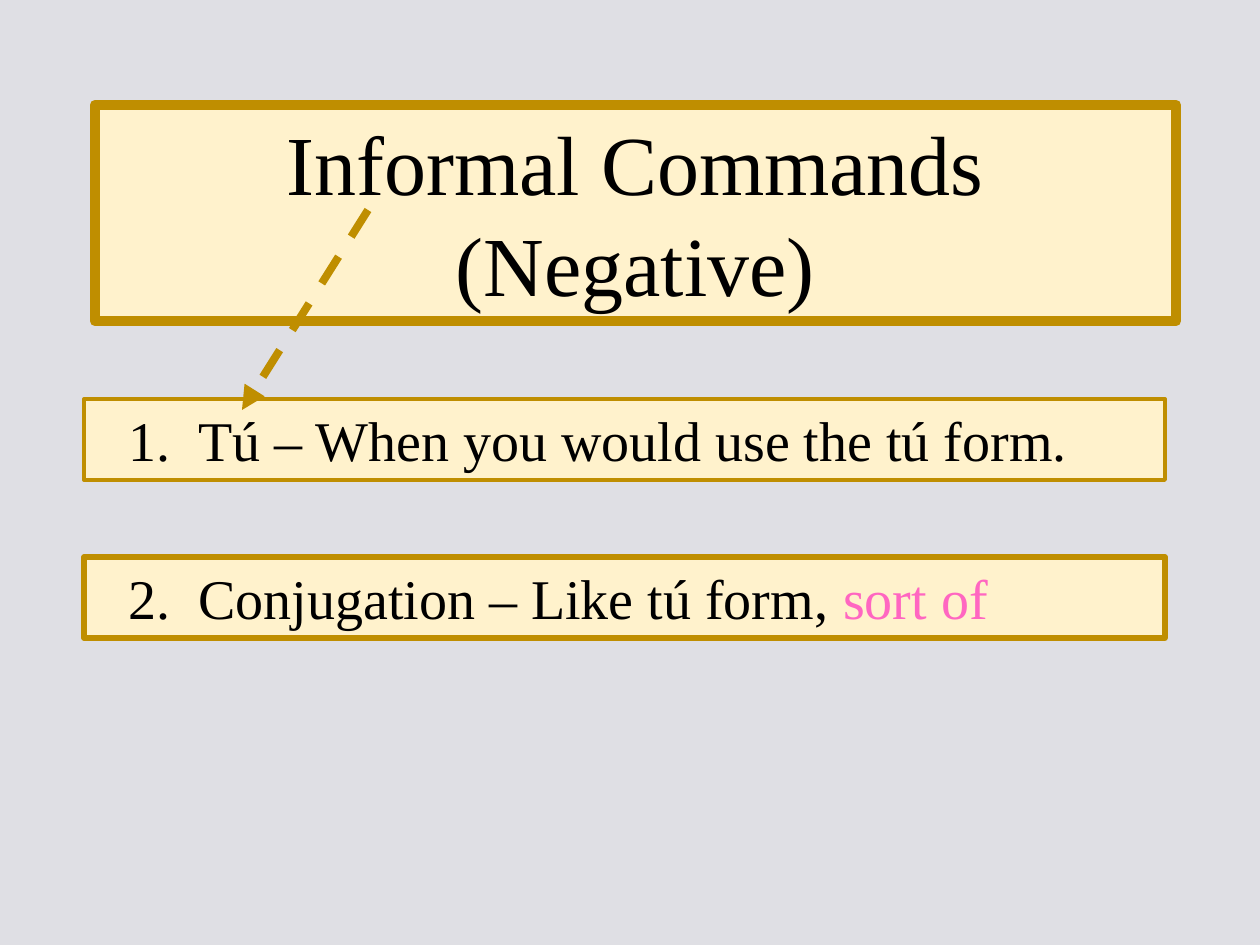
from lxml.etree import SubElement
from pptx import Presentation
from pptx.dml.color import RGBColor
from pptx.enum.dml import MSO_LINE_DASH_STYLE as Dash
from pptx.enum.shapes import MSO_CONNECTOR as Connector, MSO_SHAPE as Shape
from pptx.enum.text import MSO_ANCHOR as Anchor, MSO_AUTO_SIZE as AutoSize, PP_ALIGN as Align
from pptx.oxml.ns import qn
from pptx.util import Pt

EMU_PER_PX = 914400 / 126
CREAM, GOLD, BLACK, PINK = "FFF2CC", "BF8E00", "000000", "FF66C1"


def px(length):
    return round(length * EMU_PER_PX)


def color(hex_code):
    return RGBColor.from_string(hex_code)


def style_box(box, left, top, width, height, border):
    box.left, box.top, box.width, box.height = map(px, (left, top, width, height))
    box.fill.solid()
    box.fill.fore_color.rgb = color(CREAM)
    box.line.color.rgb = color(GOLD)
    box.line.width = Pt(border)


def write_text(box, runs, size, align=Align.LEFT, number=None):
    frame = box.text_frame
    frame.word_wrap = True
    frame.auto_size = AutoSize.SHAPE_TO_FIT_TEXT
    frame.vertical_anchor = Anchor.TOP
    paragraph = frame.paragraphs[0]
    paragraph.alignment = align
    paragraph.line_spacing = 1.0
    properties = paragraph._p.get_or_add_pPr()
    before = SubElement(properties, qn("a:spcBef"))
    SubElement(before, qn("a:spcPct"), val="50000")
    if number:
        properties.set("marL", str(px(102)))
        properties.set("indent", str(px(-70)))
        SubElement(properties, qn("a:buFontTx"))
        SubElement(properties, qn("a:buAutoNum"), type="arabicPeriod", startAt=str(number))
    for text, hex_code in runs:
        run = paragraph.add_run()
        run.text = text
        run.font.name = "Times New Roman"
        run.font.size = Pt(size)
        run.font.color.rgb = color(hex_code)


def add_rule(slide, number, top, border, runs):
    box = slide.shapes.add_shape(Shape.RECTANGLE, 0, 0, 0, 0)
    box.shadow.inherit = False
    style_box(box, 84, top, 1081, 81, border)
    write_text(box, runs, 32, number=number)


def add_dashed_arrow(slide, start, end):
    arrow = slide.shapes.add_connector(Connector.STRAIGHT, *map(px, start + end))
    arrow.line.color.rgb = color(GOLD)
    arrow.line.width = Pt(4.5)
    arrow.line.dash_style = Dash.DASH
    SubElement(arrow.line._get_or_add_ln(), qn("a:tailEnd"), type="triangle")
    SubElement(arrow._element.spPr, qn("a:effectLst"))


def main():
    deck = Presentation()
    deck.slide_width, deck.slide_height = px(1260), px(945)
    slide = deck.slides.add_slide(deck.slide_layouts[5])
    slide.background.fill.solid()
    slide.background.fill.fore_color.rgb = color("DFDFE4")

    title = slide.shapes.title
    style_box(title, 95, 105, 1081, 216, 6)
    write_text(title, [("Informal Commands (Negative)", BLACK)], 48, align=Align.CENTER)

    add_rule(slide, 1, 399, 2.25, [("Tú – When you would use the tú form.", BLACK)])
    add_rule(slide, 2, 557, 3, [("Conjugation – Like tú form, ", BLACK), ("sort of", PINK)])
    add_dashed_arrow(slide, (368, 210), (242, 410))

    deck.save("out.pptx")


if __name__ == "__main__":
    main()
